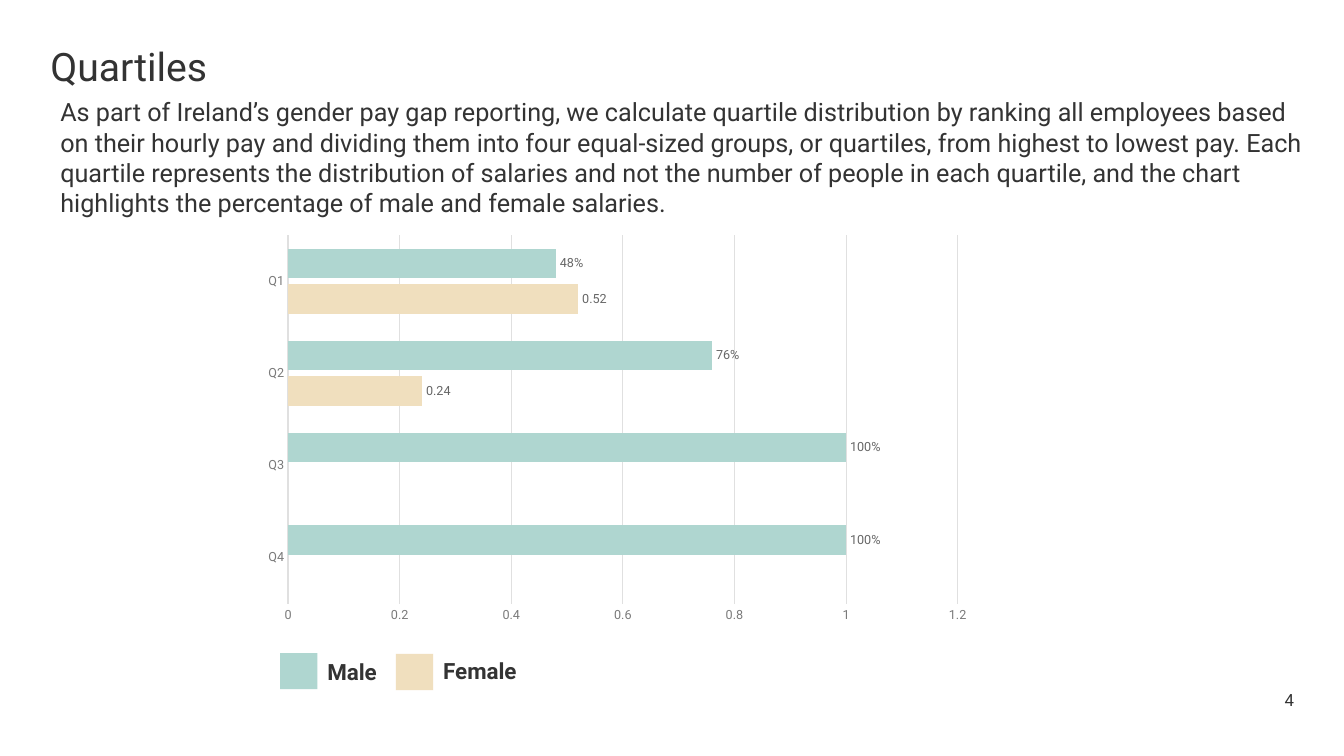
from dataclasses import dataclass
from typing import Optional

from lxml import etree
from pptx import Presentation
from pptx import util as u
from pptx.chart import data as chart_data
from pptx.dml.color import RGBColor
from pptx.enum import chart as chart_enum, shapes, text
from pptx.oxml import ns

FONT = "Roboto"
INK = RGBColor(0x33, 0x33, 0x33)
AXIS_GREY = RGBColor(0x7A, 0x7A, 0x7A)
LABEL_GREY = RGBColor(0x66, 0x66, 0x66)
GRID_GREY = RGBColor(0xE0, 0xE0, 0xE0)
MINT = RGBColor(0xAF, 0xD6, 0xD0)
SAND = RGBColor(0xF0, 0xDF, 0xBE)


@dataclass
class TextBox:
    words: str
    left: float
    top: float
    width: float
    height: float
    size: int
    bold: bool = False
    inset: bool = True
    align: text.PP_ALIGN = text.PP_ALIGN.LEFT
    spacing: float = 1.0


@dataclass
class PaySeries:
    name: str
    shares: list[Optional[float]]
    color: RGBColor
    label_format: str


@dataclass
class LegendKey:
    color: RGBColor
    left: float
    top: float
    label: TextBox


INTRO = (
    "As part of Ireland’s gender pay gap reporting, we calculate quartile distribution "
    "by ranking all employees based on their hourly pay and dividing them into four "
    "equal-sized groups, or quartiles, from highest to lowest pay. Each quartile "
    "represents the distribution of salaries and not the number of people in each "
    "quartile, and the chart highlights the percentage of male and female salaries."
)
TEXT_BOXES = [
    TextBox("Quartiles", 1.27, 1.19, 31.32, 2.54, 28, inset=False, spacing=0.9),
    TextBox(INTRO, 1.27, 2.31, 31.95, 3.15, 18),
    TextBox("4", 31.34, 17.37, 1.27, 0.64, 12, inset=False, align=text.PP_ALIGN.RIGHT),
]
QUARTILES = ["Q4", "Q3", "Q2", "Q1"]
PAY_SERIES = [
    PaySeries("Series 1", [None, None, 0.24, 0.52], SAND, "General"),
    PaySeries("Series 2", [1, 1, 0.76, 0.48], MINT, "0%"),
]
LEGEND = [
    LegendKey(MINT, 7.06, 16.46, TextBox("Male", 8.0, 16.46, 1.93, 0.94, 16, bold=True)),
    LegendKey(SAND, 9.98, 16.48, TextBox("Female", 10.92, 16.43, 2.62, 0.94, 16, bold=True)),
]
PLOT_AREA = {"x": 0.047, "y": 0.02, "w": 0.92, "h": 0.91}


def style_font(font, size: int, color: RGBColor, bold: bool = False) -> None:
    font.name = FONT
    font.size = u.Pt(size)
    font.bold = bold
    font.color.rgb = color


def draw_text(page, item: TextBox) -> None:
    box = page.shapes.add_textbox(
        u.Cm(item.left), u.Cm(item.top), u.Cm(item.width), u.Cm(item.height)
    )
    frame = box.text_frame
    frame.word_wrap = True
    if not item.inset:
        frame.margin_left = frame.margin_right = 0
        frame.margin_top = frame.margin_bottom = 0
    para = frame.paragraphs[0]
    para.text = item.words
    para.alignment = item.align
    para.line_spacing = item.spacing
    style_font(para.font, item.size, INK, item.bold)


def draw_legend_key(page, key: LegendKey) -> None:
    swatch = page.shapes.add_shape(
        shapes.MSO_SHAPE.RECTANGLE, u.Cm(key.left), u.Cm(key.top), u.Cm(0.94), u.Cm(0.91)
    )
    swatch.shadow.inherit = False
    swatch.fill.solid()
    swatch.fill.fore_color.rgb = key.color
    swatch.line.fill.background()
    draw_text(page, key.label)


def fix_plot_area(chart) -> None:
    """Give the inner plot area a fixed place within the chart."""
    plot_area = chart.plots[0]._element.getparent()
    for old in plot_area.findall(ns.qn("c:layout")):
        plot_area.remove(old)
    layout = etree.Element(ns.qn("c:layout"))
    manual = etree.SubElement(layout, ns.qn("c:manualLayout"))
    settings = {"layoutTarget": "inner", "xMode": "edge", "yMode": "edge", **PLOT_AREA}
    for tag, value in settings.items():
        etree.SubElement(manual, ns.qn(f"c:{tag}")).set("val", str(value))
    plot_area.insert(0, layout)


def draw_chart(page) -> None:
    figures = chart_data.CategoryChartData()
    figures.categories = QUARTILES
    for item in PAY_SERIES:
        figures.add_series(item.name, item.shares, item.label_format)
    chart = page.shapes.add_chart(
        chart_enum.XL_CHART_TYPE.BAR_CLUSTERED,
        u.Cm(6.4), u.Cm(5.72), u.Cm(18.34), u.Cm(10.21), figures,
    ).chart
    chart.has_legend = False
    chart.has_title = False
    style_font(chart.font, 10, INK)
    fix_plot_area(chart)

    # Bars and their labels
    plot = chart.plots[0]
    plot.gap_width = 92
    plot.overlap = -20
    plot.vary_by_categories = False
    for series, item in zip(plot.series, PAY_SERIES):
        series.format.fill.solid()
        series.format.fill.fore_color.rgb = item.color
        series.invert_if_negative = False
        labels = series.data_labels
        labels.show_value = True
        labels.position = chart_enum.XL_LABEL_POSITION.OUTSIDE_END
        labels.number_format = item.label_format
        labels.number_format_is_linked = False
        style_font(labels.font, 9, LABEL_GREY)

    # Axes
    for axis in (chart.category_axis, chart.value_axis):
        axis.major_tick_mark = chart_enum.XL_TICK_MARK.NONE
        axis.minor_tick_mark = chart_enum.XL_TICK_MARK.NONE
        style_font(axis.tick_labels.font, 9, AXIS_GREY)
    category_line = chart.category_axis.format.line
    category_line.color.rgb = GRID_GREY
    category_line.width = u.Pt(1)
    value_axis = chart.value_axis
    value_axis.minimum_scale = 0
    value_axis.maximum_scale = 1.2
    value_axis.major_unit = 0.2
    value_axis.tick_labels.number_format = "General"
    value_axis.tick_labels.number_format_is_linked = False
    value_axis.format.line.fill.background()
    grid_line = value_axis.major_gridlines.format.line
    grid_line.color.rgb = GRID_GREY
    grid_line.width = u.Pt(0.75)


def main() -> None:
    deck = Presentation()
    deck.slide_width = u.Cm(33.87)
    deck.slide_height = u.Cm(19.05)
    page = deck.slides.add_slide(deck.slide_layouts[6])

    # Title, introduction and page number
    for item in TEXT_BOXES:
        draw_text(page, item)

    # Quartile chart with its legend
    draw_chart(page)
    for key in LEGEND:
        draw_legend_key(page, key)

    deck.save("out.pptx")


if __name__ == "__main__":
    main()
